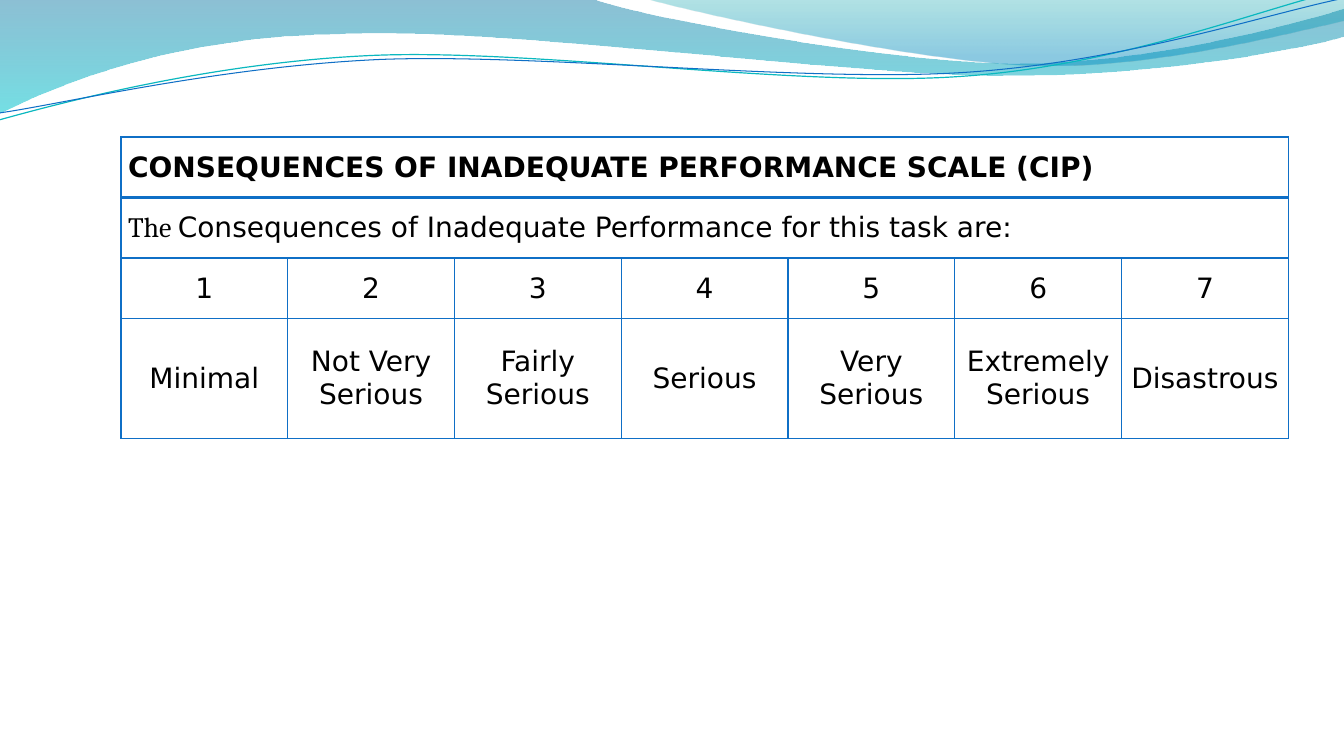
from dataclasses import dataclass

from lxml.etree import SubElement
from pptx import Presentation
from pptx.dml.color import RGBColor as RGB
from pptx.enum.text import MSO_ANCHOR as Anchor, PP_ALIGN as Align
from pptx.oxml import parse_xml
from pptx.oxml.ns import nsdecls, qn
from pptx.util import Inches, Pt


@dataclass(frozen=True)
class Theme:
    rule: str = "0F6FC6"
    accent: str = "0AB8BF"
    ink: str = "000000"
    body_font: str = "DejaVu Sans"
    lead_font: str = "Cambria"
    text_size: int = 20
    # gradient stops: position, colour, opacity in percent
    wide_wave: tuple = ((0, "0074A1", 45), (100, "00C6CF", 55))
    right_wave: tuple = ((0, "00A1A9", 30), (80, "008BBF", 45))


class SlideBuilder:
    def __init__(self, slide, theme):
        self.slide = slide
        self.theme = theme

    def outline(self, start, segments, close):
        """Draw straight (2 numbers) and cubic (6 numbers) segments."""
        builder = self.slide.shapes.build_freeform(*map(Inches, start))
        for segment in segments:
            lengths = [Inches(number) for number in segment]
            builder.add_line_segments(
                list(zip(lengths[::2], lengths[1::2])), close=False)
        if close:
            builder.add_line_segments([], close=True)
        shape = builder.convert_to_shape()
        shape.shadow.inherit = False
        steps = iter(list(shape._element.spPr.iter(qn("a:lnTo"))))
        for segment in segments:
            first, *others = [next(steps) for _ in range(len(segment) // 2)]
            if others:
                bend = parse_xml(f'<a:cubicBezTo {nsdecls("a")}/>')
                first.addprevious(bend)
                for step in (first, *others):
                    bend.append(step[0])
                    step.getparent().remove(step)
        return shape

    def wave(self, start, *segments, stops):
        shape = self.outline(start, segments, close=True)
        shape.line.fill.background()
        shape.fill.gradient()
        shape.fill.gradient_angle = 270
        for stop, (position, colour, _) in zip(shape.fill.gradient_stops, stops):
            stop.position = position / 100
            stop.color.rgb = RGB.from_string(colour)
        colours = shape._element.spPr.iter(qn("a:srgbClr"))
        for colour, (_, _, opacity) in zip(list(colours), stops):
            SubElement(colour, qn("a:alpha"), val=str(opacity * 1000))

    def curve(self, start, *segments, colour, width):
        shape = self.outline(start, segments, close=False)
        shape.fill.background()
        shape.line.color.rgb = RGB.from_string(colour)
        shape.line.width = Pt(width)

    def table(self, left, top, width, row_heights, rows):
        """Rows are lists of cells, cells are lists of (text, font) runs.

        A row with a single cell spans all columns.
        """
        columns = max(map(len, rows))
        frame = self.slide.shapes.add_table(
            len(rows), columns, Inches(left), Inches(top),
            Inches(width), Inches(sum(row_heights)))
        table = frame.table
        table.first_row = table.horz_banding = False
        for r, (cells, height) in enumerate(zip(rows, row_heights)):
            table.rows[r].height = Inches(height)
            spans = len(cells) == 1
            if spans:
                table.cell(r, 0).merge(table.cell(r, columns - 1))
            for c in range(columns):
                self.borders(table.cell(r, c), heading=r == 0, below=r == 1)
            for c, runs in enumerate(cells):
                self.cell_text(table.cell(r, c), runs, bold=r == 0,
                               align=Align.JUSTIFY if spans else Align.CENTER)

    def borders(self, cell, heading, below):
        """Rule a cell; the row below the heading takes the heading's line."""
        cell.fill.background()
        properties = cell._tc.get_or_add_tcPr()
        widths = {"L": 1, "R": 1, "T": 1, "B": 2 if heading else 1}
        if below:
            del widths["T"]
        for index, (side, width) in enumerate(widths.items()):
            properties.insert(index, parse_xml(
                f'<a:ln{side} {nsdecls("a")} w="{Pt(width)}"><a:solidFill>'
                f'<a:srgbClr val="{self.theme.rule}"/></a:solidFill></a:ln{side}>'))

    def cell_text(self, cell, runs, bold, align):
        cell.vertical_anchor = Anchor.MIDDLE
        cell.margin_left = cell.margin_right = Inches(0.07)
        cell.margin_top = cell.margin_bottom = 0
        paragraph = cell.text_frame.paragraphs[0]
        paragraph.alignment = align
        font = paragraph.font
        font.size = Pt(self.theme.text_size)
        font.bold = bold
        font.color.rgb = RGB.from_string(self.theme.ink)
        for text, name in runs:
            run = paragraph.add_run()
            run.text = text
            if len(runs) == 1:
                font.name = name
            else:
                run.font.name = name


def main():
    theme = Theme()
    deck = Presentation()
    deck.slide_width, deck.slide_height = Inches(13.33), Inches(7.5)
    builder = SlideBuilder(deck.slides.add_slide(deck.slide_layouts[6]), theme)

    builder.wave(
        (0, 0), (5.87, -0.01),
        (6.34, 0.17, 8.85, 0.63, 10.11, 0.63),
        (11.38, 0.63, 12.78, 0.26, 13.33, 0.09),
        (13.35, 0.36),
        (13.11, 0.44, 11.6, 0.76, 9.94, 0.75),
        (8.29, 0.75, 5.09, 0.28, 3.43, 0.34),
        (1.72, 0.36, 0.61, 0.83, -0.01, 1.13),
        (0, 0), stops=theme.wide_wave)
    builder.wave(
        (6.39, -0.01),
        (6.79, 0.11, 9.09, 0.62, 10.25, 0.65),
        (11.41, 0.69, 12.82, 0.32, 13.33, 0.21),
        (13.33, 0), (6.39, -0.01), stops=theme.right_wave)
    builder.curve(
        (-0.01, 1.19),
        (0.64, 1.01, 2.11, 0.62, 3.69, 0.55),
        (5.27, 0.48, 7.9, 0.87, 9.5, 0.76),
        (11.1, 0.66, 12.52, 0.08, 13.31, -0.1),
        colour=theme.accent, width=0.85)
    builder.curve(
        (0, 1.12),
        (0.63, 1.03, 2.18, 0.66, 3.78, 0.59),
        (5.37, 0.53, 7.96, 0.82, 9.55, 0.72),
        (11.15, 0.62, 12.55, 0.14, 13.34, -0.02),
        colour=theme.rule, width=0.75)

    body = theme.body_font
    ratings = ["Minimal", "Not Very Serious", "Fairly Serious", "Serious",
               "Very Serious", "Extremely Serious", "Disastrous"]
    builder.table(1.2, 1.36, 11.58, [0.6, 0.6, 0.6, 1.19], [
        [[("CONSEQUENCES OF INADEQUATE PERFORMANCE SCALE (CIP)", body)]],
        [[("The ", theme.lead_font),
          ("Consequences of Inadequate Performance for this task are:", body)]],
        [[(str(score), body)] for score in range(1, len(ratings) + 1)],
        [[(rating, body)] for rating in ratings],
    ])
    deck.save("out.pptx")


if __name__ == "__main__":
    main()
